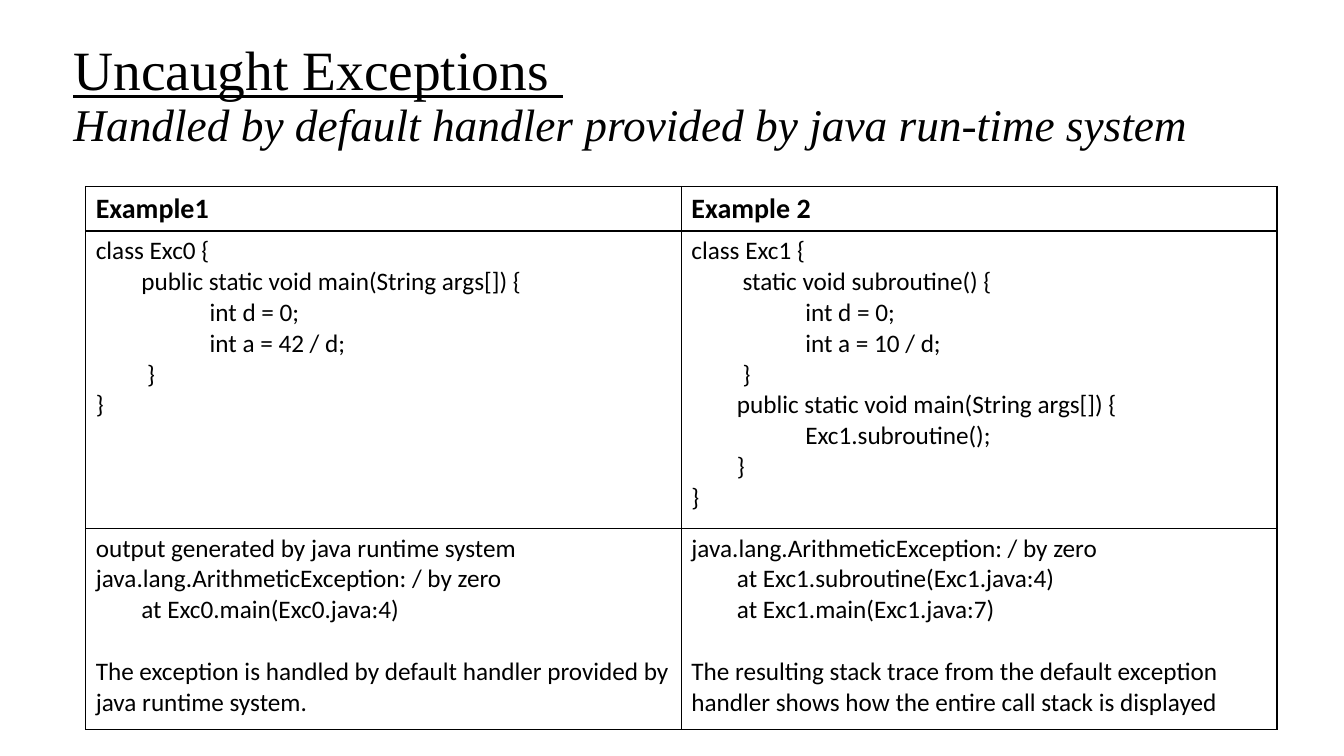
"""Build a slide on uncaught exceptions with a table of two examples."""
from lxml import etree
from pptx import Presentation
from pptx.dml.color import RGBColor
from pptx.enum.text import MSO_ANCHOR
from pptx.oxml.ns import qn
from pptx.util import Cm, Pt

BLACK = RGBColor(0, 0, 0)
MIDDLE = MSO_ANCHOR.MIDDLE
STEP = 0.1435
FLUSH, NEAR, MID, FAR = (Cm(STEP * n) for n in (0, 8, 9, 20))
GAP = Pt(22)

HEAD = {"name": "Calibri", "size": Pt(20), "bold": True}
BODY = {"name": "Calibri", "size": Pt(18), "bold": False}
TOP = {"name": "Times New Roman", "size": Pt(39.6), "underline": True}
SUB = {"name": "Times New Roman", "size": Pt(32.4), "italic": True}

ROWS = [
    (1.1, HEAD, [[(FLUSH, "Example1")], [(FLUSH, "Example 2")]]),
    (7.49, BODY, [
        [
            (FLUSH, "class Exc0 {"),
            (NEAR, "public static void main(String args[]) {"),
            (FAR, "int d = 0;"),
            (FAR, "int a = 42 / d;"),
            (MID, "}"),
            (FLUSH, "}"),
        ],
        [
            (FLUSH, "class Exc1 {"),
            (MID, "static void subroutine() {"),
            (FAR, "int d = 0;"),
            (FAR, "int a = 10 / d;"),
            (MID, "}"),
            (NEAR, "public static void main(String args[]) {"),
            (FAR, "Exc1.subroutine();"),
            (NEAR, "}"),
            (FLUSH, "}"),
        ],
    ]),
    (5.08, BODY, [
        [
            (FLUSH, "output generated by java runtime system"),
            (FLUSH, "java.lang.ArithmeticException: / by zero"),
            (NEAR, "at Exc0.main(Exc0.java:4)"),
            (FLUSH, "The exception is handled by default handler provided by "
                    "java runtime system.", GAP),
        ],
        [
            (FLUSH, "java.lang.ArithmeticException: / by zero"),
            (NEAR, "at Exc1.subroutine(Exc1.java:4)"),
            (NEAR, "at Exc1.main(Exc1.java:7)"),
            (FLUSH, "The resulting stack trace from the default exception "
                    "handler shows how the entire call stack is displayed", GAP),
        ],
    ]),
]


class Page:
    """Hold the ink colour and the current slide."""

    def __init__(self, slide, ink):
        self.slide = slide
        self.ink = ink

    def run(self, para, text, style):
        """Add a styled run to a paragraph."""
        run = para.add_run()
        run.text = text
        for key, value in style.items():
            setattr(run.font, key, value)
        run.font.color.rgb = self.ink

    def title(self, box, parts):
        """Add a heading whose parts stand on separate lines."""
        frame = self.slide.shapes.add_textbox(*map(Cm, box)).text_frame
        frame.word_wrap = True
        frame.vertical_anchor = MIDDLE
        para = frame.paragraphs[0]
        para.line_spacing = 0.9
        for i, (text, style) in enumerate(parts):
            if i:
                para.add_line_break()
            self.run(para, text, style)

    def border(self, cell):
        """Draw a thin line on every side of a cell."""
        props = cell._tc.get_or_add_tcPr()
        for side in ("a:lnL", "a:lnR", "a:lnT", "a:lnB"):
            line = etree.SubElement(props, qn(side), w=str(Pt(1)))
            fill = etree.SubElement(line, qn("a:solidFill"))
            etree.SubElement(fill, qn("a:srgbClr"), val=str(self.ink))

    def cell(self, cell, lines, style):
        """Fill a cell with indented lines."""
        self.border(cell)
        cell.fill.background()
        frame = cell.text_frame
        for i, (indent, text, *gap) in enumerate(lines):
            para = frame.add_paragraph() if i else frame.paragraphs[0]
            para._p.get_or_add_pPr().set("marL", str(indent))
            if gap:
                para.space_before = gap[0]
            self.run(para, text, style)

    def table(self, box, rows):
        """Add a plain bordered table."""
        count = len(rows[0][2])
        grid = self.slide.shapes.add_table(len(rows), count, *map(Cm, box)).table
        grid.first_row = grid.horz_banding = False
        for r, (height, style, cells) in enumerate(rows):
            grid.rows[r].height = Cm(height)
            for c, lines in enumerate(cells):
                self.cell(grid.cell(r, c), lines, style)


def main():
    """Build and save the deck."""
    deck = Presentation()
    deck.slide_width, deck.slide_height = Cm(33.87), Cm(19.05)
    page = Page(deck.slides.add_slide(deck.slide_layouts[6]), BLACK)
    page.table((2.16, 4.7, 30.02, 13.67), ROWS)
    page.title((1.6, 0.97, 31.5, 2.95), [
        ("Uncaught Exceptions ", TOP),
        ("Handled by default handler provided by java run-time system", SUB),
    ])
    deck.save("out.pptx")


if __name__ == "__main__":
    main()
